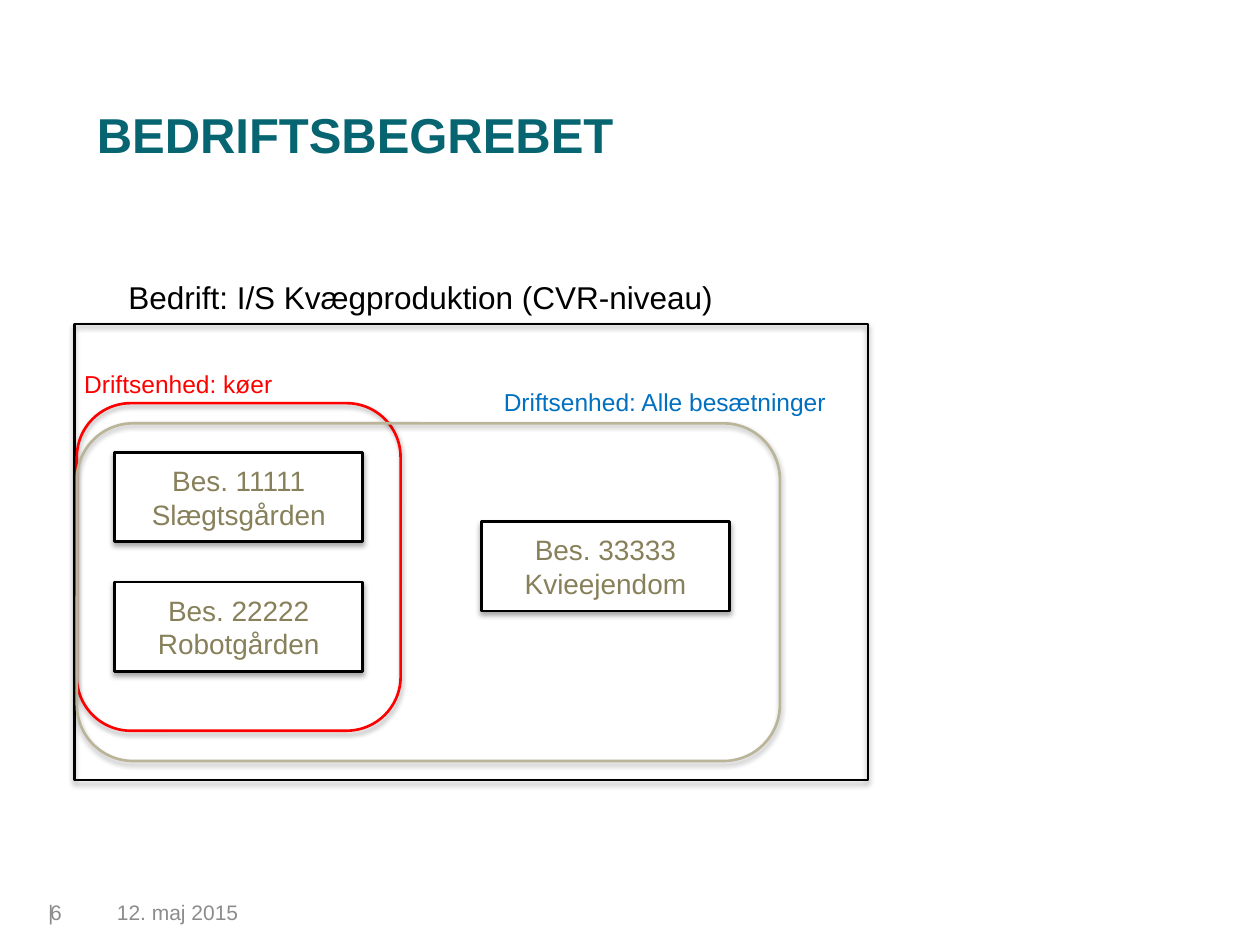
from dataclasses import dataclass

from lxml.etree import SubElement
from pptx import Presentation
from pptx.dml.color import RGBColor
from pptx.enum.shapes import MSO_SHAPE
from pptx.enum.text import MSO_ANCHOR, PP_ALIGN
from pptx.oxml.ns import qn
from pptx.util import Inches, Pt


@dataclass(frozen=True)
class Theme:
    font: str = "Arial"
    title: str = "076471"
    muted: str = "8C8C8C"
    black: str = "000000"
    white: str = "FFFFFF"
    herd_text: str = "87805A"
    cows: str = "FF0000"
    all_herds_line: str = "BAB498"
    all_herds_text: str = "0070C0"
    title_size: int = 28
    heading_size: int = 18
    herd_size: int = 16
    label_size: int = 14
    footer_size: int = 12
    line_width: float = 1.5


THEME = Theme()
COLUMNS, ROWS = 100, 75
CELL = Inches(10) // COLUMNS


def cells(*counts):
    """Turn grid counts (left, top, width, height) into lengths."""
    return [round(count * CELL) for count in counts]


def write(frame, text, size, color, bold=False, align=PP_ALIGN.LEFT):
    frame.text = text
    for para in frame.paragraphs:
        para.alignment = align
        for span in para.runs:
            span.font.name = THEME.font
            span.font.size = Pt(size)
            span.font.bold = bold
            span.font.color.rgb = RGBColor.from_string(color)


def add_text(page, area, text, size, color, bold=False, wrap=True,
             anchor=MSO_ANCHOR.TOP):
    box = page.shapes.add_textbox(*cells(*area))
    box.text_frame.word_wrap = wrap
    box.text_frame.vertical_anchor = anchor
    write(box.text_frame, text, size, color, bold)
    return box


def add_soft_shadow(shape):
    shape.shadow.inherit = False
    effects = shape._element.spPr.find(qn("a:effectLst"))
    shadow = SubElement(effects, qn("a:outerShdw"), blurRad=str(Pt(3.1)),
                        dist=str(Pt(1.8)), dir="5400000", rotWithShape="0")
    color = SubElement(shadow, qn("a:srgbClr"), val=THEME.black)
    SubElement(color, qn("a:alpha"), val="35000")


def add_frame(page, area, line, kind=MSO_SHAPE.RECTANGLE):
    frame = page.shapes.add_shape(kind, *cells(*area))
    frame.fill.background()
    frame.line.color.rgb = RGBColor.from_string(line)
    frame.line.width = Pt(THEME.line_width)
    add_soft_shadow(frame)
    return frame


def add_herd(page, column, row, number, name):
    herd = add_frame(page, (column, row, 19.7, 7.1), THEME.black)
    herd.fill.solid()
    herd.fill.fore_color.rgb = RGBColor.from_string(THEME.white)
    herd.text_frame.vertical_anchor = MSO_ANCHOR.MIDDLE
    write(herd.text_frame, f"Bes. {number}\n{name}", THEME.herd_size,
          THEME.herd_text, align=PP_ALIGN.CENTER)


def add_footer(page):
    add_text(page, (8.3, 70.9, 23.3, 4), "12. maj 2015",
             THEME.footer_size, THEME.muted)
    number = add_text(page, (0, 70.9, 7.8, 4), "6\t|",
                      THEME.footer_size, THEME.muted)
    # Indent the number and set a tab stop for the divider
    properties = number.text_frame.paragraphs[0]._p.get_or_add_pPr()
    properties.set("marL", str(Inches(0.3)))
    properties.set("indent", "0")
    stops = SubElement(properties, qn("a:tabLst"))
    SubElement(stops, qn("a:tab"), pos=str(Inches(0.54)), algn="l")


def main():
    deck = Presentation()
    deck.slide_width, deck.slide_height = cells(COLUMNS, ROWS)
    page = deck.slides.add_slide(deck.slide_layouts[6])

    # Title and footer
    add_text(page, (6.7, 4.4, 88.3, 12.5), "BEDRIFTSBEGREBET",
             THEME.title_size, THEME.title, bold=True,
             anchor=MSO_ANCHOR.MIDDLE)
    add_footer(page)

    # Herds
    for herd in ((9.1, 35.9, "11111", "Slægtsgården"),
                 (9.1, 46.2, "22222", "Robotgården"),
                 (38.2, 41.4, "33333", "Kvieejendom")):
        add_herd(page, *herd)

    # Whole business
    add_frame(page, (5.9, 25.7, 63, 36.2), THEME.black)
    add_text(page, (9.2, 21.6, 50.2, 4),
             "Bedrift: I/S Kvægproduktion (CVR-niveau)",
             THEME.heading_size, THEME.black)

    # Operating units: outline and label
    for outline, line, label, text, color in (
            ((6.1, 32, 25.7, 26), THEME.cows,
             (5.7, 28.8, 17, 3.4), "Driftsenhed: køer", THEME.cows),
            ((6.1, 33.6, 55.8, 26.8), THEME.all_herds_line,
             (39, 30.2, 27.7, 3.4), "Driftsenhed: Alle besætninger",
             THEME.all_herds_text)):
        add_frame(page, outline, line, MSO_SHAPE.ROUNDED_RECTANGLE)
        add_text(page, label, text, THEME.label_size, color, wrap=False)

    deck.save("out.pptx")


if __name__ == "__main__":
    main()
